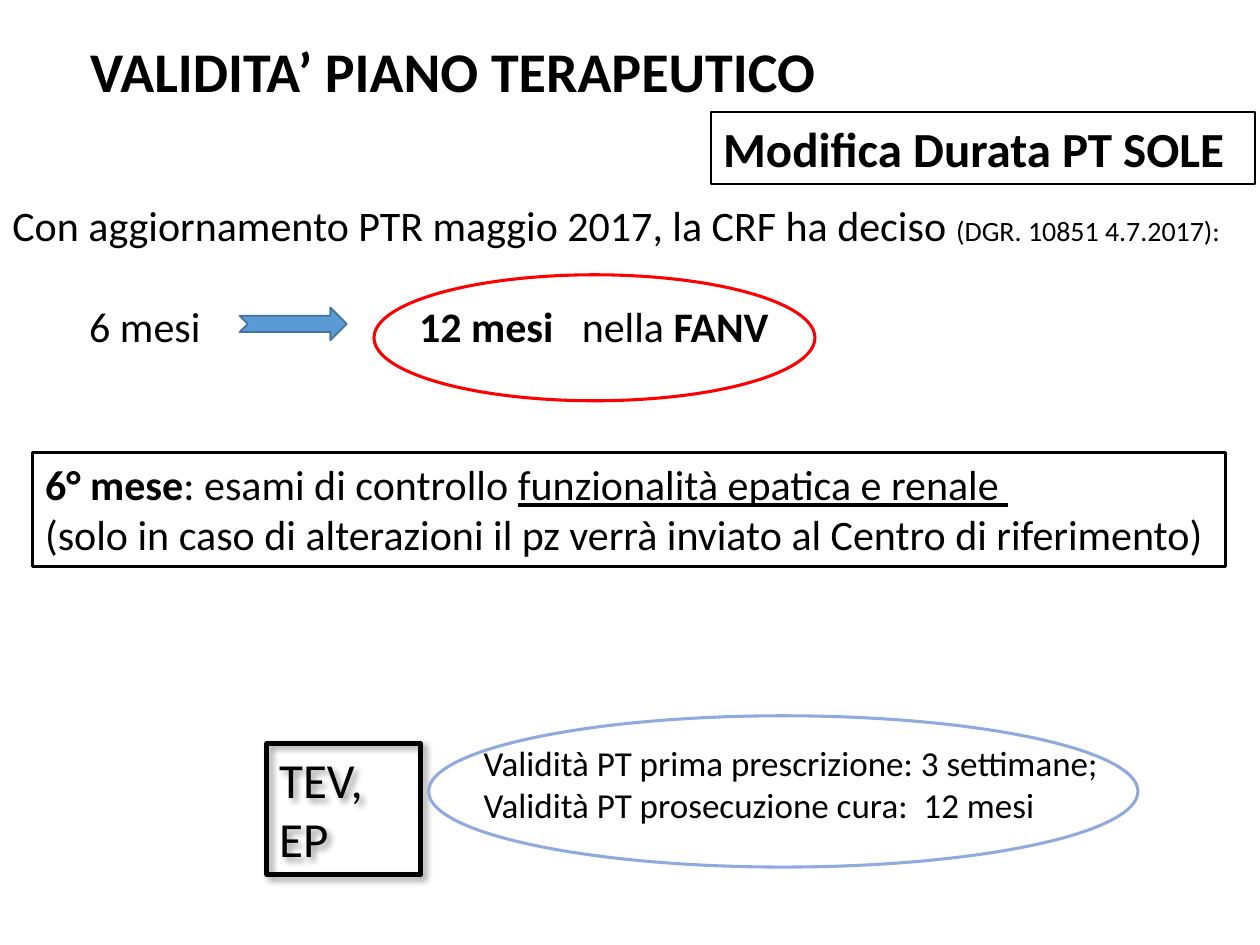
from lxml.etree import SubElement
from pptx import Presentation
from pptx.dml.color import RGBColor
from pptx.enum.shapes import MSO_SHAPE
from pptx.enum.text import MSO_ANCHOR, PP_ALIGN
from pptx.oxml import parse_xml
from pptx.oxml.ns import qn
from pptx.util import Cm, Pt

BLACK = RGBColor(0, 0, 0)
RED = RGBColor(0xFF, 0, 0)
BLUE = RGBColor(0x5B, 0x9B, 0xD5)
DARK_BLUE = RGBColor(0x43, 0x73, 0x9E)
PALE_BLUE = RGBColor(0x8F, 0xAA, 0xDC)
NAMESPACE = "http://schemas.openxmlformats.org/drawingml/2006/main"

deck = Presentation()
deck.slide_width, deck.slide_height = Cm(25.4), Cm(19.05)
page = deck.slides.add_slide(deck.slide_layouts[6])


def add_outline(kind, place, color, width):
    shape = page.shapes.add_shape(kind, *map(Cm, place))
    shape.shadow.inherit = False
    shape.fill.background()
    shape.line.color.rgb = color
    shape.line.width = Pt(width)
    return shape


def write_text(box, size, lines):
    frame = box.text_frame
    frame.word_wrap = True
    frame.vertical_anchor = MSO_ANCHOR.TOP
    for index, line in enumerate(lines):
        para = frame.paragraphs[0] if index == 0 else frame.add_paragraph()
        para.alignment = PP_ALIGN.LEFT
        for text, style in line:
            span = para.add_run()
            span.text = text
            span.font.name = "Calibri"
            span.font.size = Pt(16 if style == "small" else size)
            span.font.color.rgb = BLACK
            span.font.bold = style == "bold"
            span.font.underline = style == "underline"


notice = add_outline(MSO_SHAPE.RECTANGLE, (14.33, 2.26, 10.97, 1.45), BLACK, 1)
write_text(notice, 28, [[("Modifica Durata PT SOLE", "bold")]])

decision = page.shapes.add_textbox(Cm(0), Cm(3.89), Cm(25.22), Cm(3.33))
write_text(decision, 24, [
    [("Con aggiornamento PTR maggio 2017, la CRF ha deciso ", "plain"),
     ("(DGR. 10851 4.7.2017):", "small")],
    [("\t6 mesi\t", "plain"), ("12 mesi\t", "bold"),
     ("nella ", "plain"), ("FANV", "bold")],
])
durations = decision.text_frame.paragraphs[1]
durations.space_before = Pt(29)
tabs = SubElement(durations.runs[0].font._element.getparent().getparent().get_or_add_pPr(), qn("a:tabLst"))
for position in (1.55, 8.2, 11.48):
    SubElement(tabs, qn("a:tab"), pos=str(Cm(position)), algn="l")

arrow = add_outline(MSO_SHAPE.NOTCHED_RIGHT_ARROW, (4.83, 6.2, 2.16, 0.66), DARK_BLUE, 1)
arrow.fill.solid()
arrow.fill.fore_color.rgb = BLUE

checks = add_outline(MSO_SHAPE.RECTANGLE, (0.66, 9.12, 24.05, 2.31), BLACK, 1.75)
write_text(checks, 24, [
    [("6° mese", "bold"), (": esami di controllo ", "plain"),
     ("funzionalità epatica e renale ", "underline")],
    [("(solo in caso di alterazioni il pz verrà inviato al Centro di riferimento)", "plain")],
])

add_outline(MSO_SHAPE.OVAL, (7.54, 5.54, 8.89, 2.54), RED, 1.75)

conditions = add_outline(MSO_SHAPE.RECTANGLE, (5.38, 14.99, 3.1, 2.64), BLACK, 2.75)
write_text(conditions, 28, [[("TEV, EP", "plain")]])
effects = conditions._element.spPr.find(qn("a:effectLst"))
effects.append(parse_xml(
    f'<a:outerShdw xmlns:a="{NAMESPACE}" blurRad="{Pt(4)}" dist="{Pt(3)}" dir="2700000" '
    'algn="tl" rotWithShape="0"><a:srgbClr val="000000"><a:alpha val="40000"/>'
    '</a:srgbClr></a:outerShdw>'
))

validity = page.shapes.add_textbox(Cm(9.5), Cm(14.83), Cm(13.21), Cm(1.96))
write_text(validity, 20, [
    [("Validità PT prima prescrizione: 3 settimane;", "plain")],
    [("Validità PT prosecuzione cura:  12 mesi", "plain")],
])
add_outline(MSO_SHAPE.OVAL, (8.64, 14.43, 14.3, 3.05), PALE_BLUE, 1.75)

title = page.shapes.add_textbox(Cm(1.57), Cm(0.61), Cm(15.27), Cm(1.63))
write_text(title, 32, [[("VALIDITA’ PIANO TERAPEUTICO", "bold")]])

deck.save("out.pptx")
